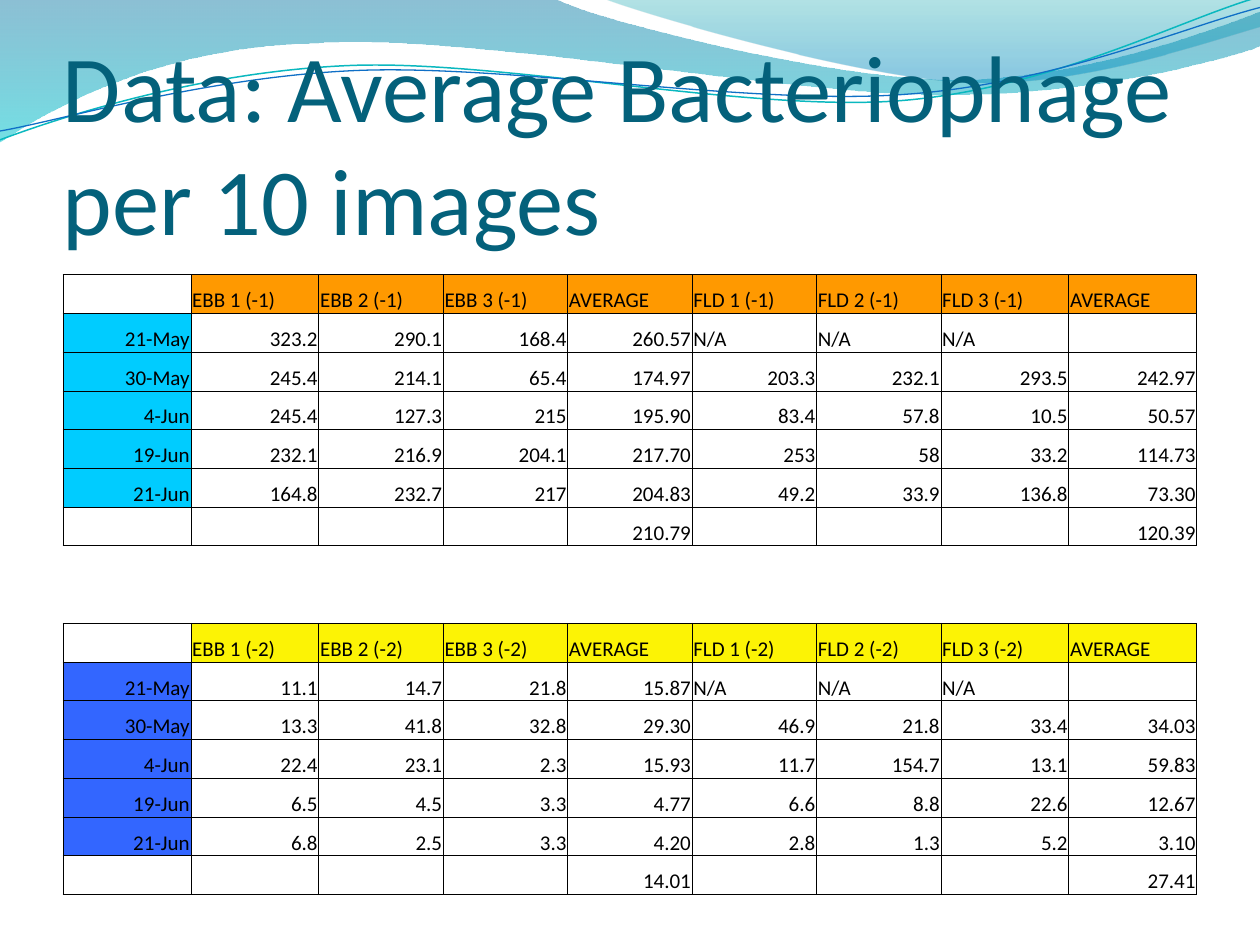
from math import cos, radians, sin

from lxml.etree import SubElement
from pptx import Presentation
from pptx.dml.color import RGBColor
from pptx.enum.text import MSO_ANCHOR as Anchor, PP_ALIGN as Align
from pptx.oxml.ns import qn
from pptx.util import Inches, Pt

COLORS = {
    "title": "04617B", "ink": "000000",
    "orange": "FF9900", "cyan": "00CCFF", "yellow": "FCF305", "blue": "3366FF",
    "wave_top": "0074A1", "wave_bottom": "00C6CF",
    "crest_top": "00A1A9", "crest_bottom": "008BBF",
    "teal_line": "0AB8BF", "blue_line": "0F6FC6",
}
FONT = "Calibri"
COLUMNS, ROWS = 9, 16
TABLE_W, TABLE_H = 9, 4.92
COLUMN_WEIGHTS = [36, 36, 35, 35, 35, 35, 35, 36, 36]
GAP_ROWS = (7, 8)
CURVE_TILT = 2.7

# Each block: dilution, header colour, date colour, first row, data, means
BLOCKS = [
    ("-1", "orange", "cyan", 0, [
        "21-May 323.2 290.1 168.4 260.57 N/A N/A N/A",
        "30-May 245.4 214.1 65.4 174.97 203.3 232.1 293.5 242.97",
        "4-Jun 245.4 127.3 215 195.90 83.4 57.8 10.5 50.57",
        "19-Jun 232.1 216.9 204.1 217.70 253 58 33.2 114.73",
        "21-Jun 164.8 232.7 217 204.83 49.2 33.9 136.8 73.30",
    ], ("210.79", "120.39")),
    ("-2", "yellow", "blue", 9, [
        "21-May 11.1 14.7 21.8 15.87 N/A N/A N/A",
        "30-May 13.3 41.8 32.8 29.30 46.9 21.8 33.4 34.03",
        "4-Jun 22.4 23.1 2.3 15.93 11.7 154.7 13.1 59.83",
        "19-Jun 6.5 4.5 3.3 4.77 6.6 8.8 22.6 12.67",
        "21-Jun 6.8 2.5 3.3 4.20 2.8 1.3 5.2 3.10",
    ], ("14.01", "27.41")),
]

# Outlines: a pair is a straight step, six numbers are a Bézier step
WAVE = [(0, 0), (4.4, -0.01), (4.76, 0.17, 6.64, 0.63, 7.58, 0.63),
        (8.53, 0.63, 9.58, 0.26, 10, 0.09), (10.01, 0.36),
        (9.83, 0.44, 8.7, 0.76, 7.46, 0.75), (6.22, 0.75, 3.82, 0.28, 2.57, 0.34),
        (1.29, 0.36, 0.46, 0.83, -0.01, 1.13), (0, 0)]
CREST = [(4.79, -0.01), (5.09, 0.11, 6.82, 0.62, 7.69, 0.65),
         (8.56, 0.69, 9.61, 0.32, 10, 0.21), (10, 0), (4.79, -0.01)]
TEAL_CURVE = [(0, 1.11), (0.48, 0.93, 1.58, 0.57, 2.77, 0.52),
              (3.95, 0.47, 5.93, 0.89, 7.13, 0.8), (8.33, 0.71, 9.38, 0.15, 9.98, -0.02)]
BLUE_CURVE = [(0, 1.04), (0.47, 0.96, 1.64, 0.61, 2.83, 0.56),
              (4.03, 0.51, 5.97, 0.84, 7.17, 0.75), (8.36, 0.67, 9.41, 0.21, 10, 0.06)]


def rgb(name):
    return RGBColor.from_string(COLORS[name])


def write(frame, text, size=12, color="ink", align=Align.LEFT):
    paragraph = frame.paragraphs[0]
    paragraph.alignment = align
    if not text:
        SubElement(paragraph._p, qn("a:endParaRPr"), sz=str(size * 100))
        return
    run = paragraph.add_run()
    run.text = text
    run.font.name, run.font.size = FONT, Pt(size)
    run.font.color.rgb = rgb(color)


def turn(steps, degrees, center):
    """Rotate every point of the steps clockwise about the center."""
    c, s = cos(radians(degrees)), sin(radians(degrees))
    turned = []
    for step in steps:
        offsets = [(x - center[0], y - center[1]) for x, y in zip(step[::2], step[1::2])]
        turned.append(tuple(value for x, y in offsets
                            for value in (center[0] + x * c - y * s, center[1] + x * s + y * c)))
    return turned


def add_outline(shapes, steps, close):
    points = [(Inches(x), Inches(y)) for step in steps
              for x, y in zip(step[::2], step[1::2])]
    builder = shapes.build_freeform(*points[0])
    builder.add_line_segments(points[1:], close=close)
    outline = builder.convert_to_shape()
    outline.shadow.inherit = False
    # Join each three segments of a Bézier step into one curve
    segments = iter(list(outline._element.iter(qn("a:lnTo"))))
    for step in steps[1:]:
        segment = next(segments)
        if len(step) == 6:
            bezier = segment.makeelement(qn("a:cubicBezTo"))
            segment.addprevious(bezier)
            for part in (segment, next(segments), next(segments)):
                bezier.append(part[0])
                part.getparent().remove(part)
    return outline


def add_band(shapes, steps, stops):
    band = add_outline(shapes, steps, True)
    band.line.fill.background()
    band.fill.gradient()
    band.fill.gradient_angle = 270
    for stop, (position, color, _) in zip(band.fill.gradient_stops, stops):
        stop.position = position
        stop.color.rgb = rgb(color)
    gradient = band._element.spPr.find(qn("a:gradFill"))
    for color_node, (_, _, opacity) in zip(gradient.iter(qn("a:srgbClr")), stops):
        SubElement(color_node, qn("a:alpha"), val=str(opacity * 1000))


def add_curve(shapes, steps, center, color, width):
    curve = add_outline(shapes, turn(steps, CURVE_TILT, center), False)
    curve.rotation = 360 - CURVE_TILT
    curve.fill.background()
    curve.line.color.rgb = rgb(color)
    curve.line.width = Pt(width)


def add_title(slide, text):
    box = slide.shapes.add_textbox(Inches(0.5), Inches(0.77), Inches(9), Inches(1.25))
    frame = box.text_frame
    frame.word_wrap = True
    frame.vertical_anchor = Anchor.BOTTOM
    frame.margin_left = frame.margin_right = frame.margin_bottom = 0
    frame.margin_top = Inches(0.05)
    write(frame, text, size=54, color="title")


def set_borders(cell, sides):
    properties = cell._tc.get_or_add_tcPr()
    for side in "LRTB":
        border = SubElement(properties, qn(f"a:ln{side}"), w=str(Pt(0.5)))
        if side in sides:
            fill = SubElement(border, qn("a:solidFill"))
            SubElement(fill, qn("a:srgbClr"), val=COLORS["ink"])
        else:
            SubElement(border, qn("a:noFill"))


def fill_cell(cell, text, fill, sides):
    cell.margin_left = cell.margin_right = cell.margin_top = Inches(0.01)
    cell.margin_bottom = 0
    cell.vertical_anchor = Anchor.BOTTOM
    set_borders(cell, sides)
    if fill:
        cell.fill.solid()
        cell.fill.fore_color.rgb = rgb(fill)
    else:
        cell.fill.background()
    is_value = text[:1].isdigit()
    write(cell.text_frame, text, align=Align.RIGHT if is_value else Align.LEFT)


def layout_cells():
    """Map (row, column) to text and fill for both blocks."""
    cells = {}
    for dilution, header_fill, date_fill, top, lines, means in BLOCKS:
        for start, tide in ((1, "EBB"), (5, "FLD")):
            labels = [f"{tide} {n} ({dilution})" for n in (1, 2, 3)] + ["AVERAGE"]
            for column, label in enumerate(labels, start):
                cells[top, column] = (label, header_fill)
        for row, line in enumerate(lines, top + 1):
            for column, value in enumerate(line.split()):
                cells[row, column] = (value, None if column else date_fill)
        for column, mean in zip((4, 8), means):
            cells[top + 6, column] = (mean, None)
    return cells


def add_counts_table(slide):
    table = slide.shapes.add_table(ROWS, COLUMNS, Inches(0.5), Inches(2.18),
                                   Inches(TABLE_W), Inches(TABLE_H)).table
    table.first_row = table.horz_banding = False
    for column, weight in zip(table.columns, COLUMN_WEIGHTS):
        column.width = Inches(TABLE_W * weight / sum(COLUMN_WEIGHTS))
    for row in table.rows:
        row.height = Inches(TABLE_H / ROWS)
    cells = layout_cells()
    gap_sides = dict(zip(GAP_ROWS, "TB"))
    for row in range(ROWS):
        for column in range(COLUMNS):
            text, fill = cells.get((row, column), ("", None))
            fill_cell(table.cell(row, column), text, fill, gap_sides.get(row, "LRTB"))


def main():
    deck = Presentation()
    deck.slide_width, deck.slide_height = Inches(10), Inches(7.5)
    slide = deck.slides.add_slide(deck.slide_layouts[6])
    # Wave decoration
    add_band(slide.shapes, WAVE, [(0, "wave_top", 45), (1, "wave_bottom", 55)])
    add_band(slide.shapes, CREST, [(0, "crest_top", 30), (0.8, "crest_bottom", 45)])
    curves = slide.shapes.add_group_shape().shapes
    add_curve(curves, TEAL_CURVE, (4.99, 0.58), "teal_line", 0.85)
    add_curve(curves, BLUE_CURVE, (5, 0.59), "blue_line", 0.75)
    # Title and counts
    add_title(slide, "Data: Average Bacteriophage per 10 images")
    add_counts_table(slide)
    deck.save("out.pptx")


if __name__ == "__main__":
    main()
